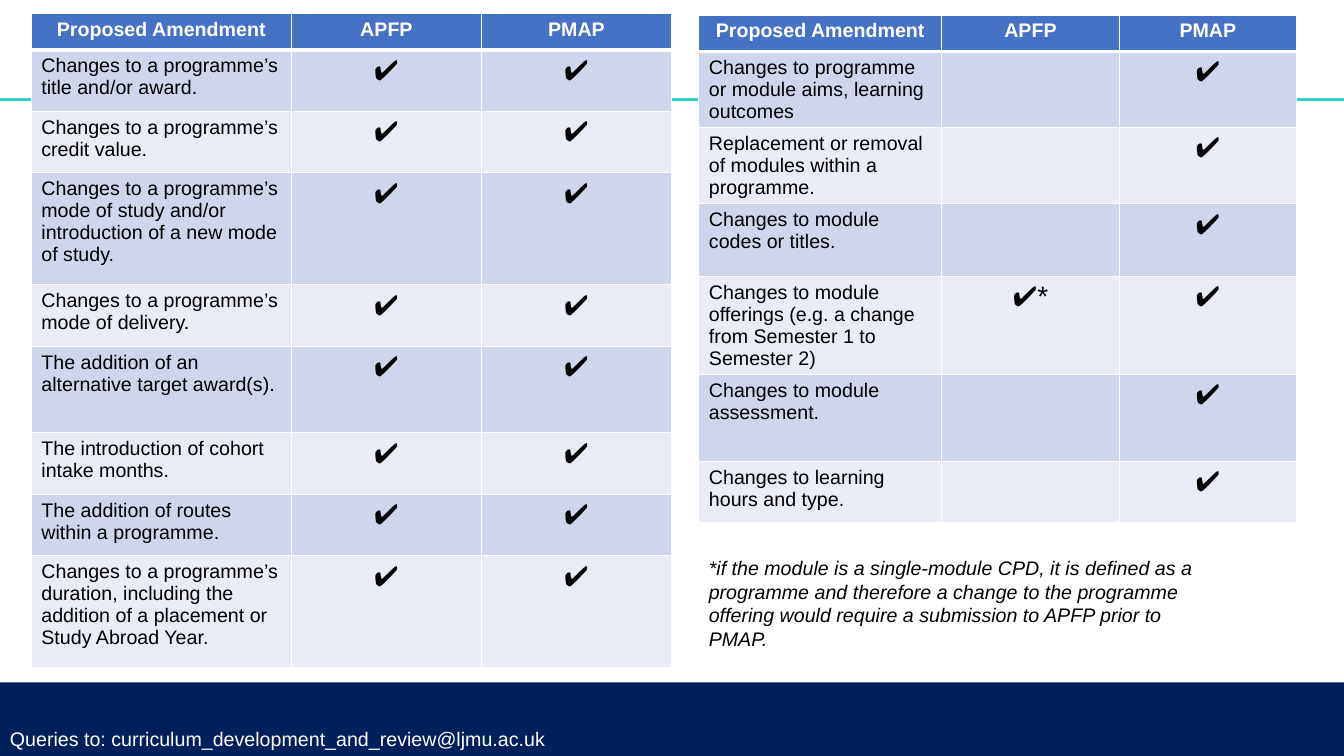
from lxml import etree
from pptx import Presentation
from pptx.dml.color import RGBColor
from pptx.enum.shapes import MSO_CONNECTOR, MSO_SHAPE
from pptx.enum.text import MSO_AUTO_SIZE, PP_ALIGN
from pptx.oxml.ns import qn
from pptx.util import Inches, Pt

LINE = MSO_CONNECTOR.STRAIGHT
RECT = MSO_SHAPE.RECTANGLE
GROW = MSO_AUTO_SIZE.SHAPE_TO_FIT_TEXT
FIXED = MSO_AUTO_SIZE.NONE
LEFT = PP_ALIGN.LEFT
MID = PP_ALIGN.CENTER

WHITE = RGBColor(0xFF, 0xFF, 0xFF)
BLACK = RGBColor(0, 0, 0)
NAVY = RGBColor(0x00, 0x20, 0x5B)
TEAL = RGBColor(0x2C, 0xD5, 0xC4)
BLUE = RGBColor(0x44, 0x72, 0xC4)
BANDS = RGBColor(0xE9, 0xEB, 0xF5), RGBColor(0xCF, 0xD5, 0xEA)

WIDE = Inches(13.33)
HIGH = Inches(7.5)
FONT = "Arial"
TICK = "✔"
HEAD = ("Proposed Amendment", "APFP", "PMAP")
COLS = (26, 19, 19)
FIRST = Inches(0.36)
STEP = Inches(0.25)

COURSE = [
    ("Changes to a programme’s title and/or award.", 2),
    ("Changes to a programme’s credit value.", 2),
    ("Changes to a programme’s mode of study and/or introduction of a new mode of study.", 4),
    ("Changes to a programme’s mode of delivery.", 2),
    ("The addition of an alternative target award(s).", 3),
    ("The introduction of cohort intake months.", 2),
    ("The addition of routes within a programme.", 2),
    ("Changes to a programme’s duration, including the addition of a placement "
     "or Study Abroad Year.", 4),
]
UNITS = [
    ("Changes to programme or module aims, learning outcomes", "", 2),
    ("Replacement or removal of modules within a programme.", "", 2),
    ("Changes to module codes or titles.", "", 2.44),
    ("Changes to module offerings (e.g. a change from Semester 1 to Semester 2)", TICK + "*", 2),
    ("Changes to module assessment.", "", 3),
    ("Changes to learning hours and type.", "", 2),
]
NOTE = ("*if the module is a single-module CPD, it is defined as a programme and therefore "
        "a change to the programme offering would require a submission to APFP prior to PMAP.")
MAIL = "Queries to: curriculum_development_and_review@ljmu.ac.uk"


def across(pct):
    return round(WIDE * pct / 100)


def down(pct):
    return round(HIGH * pct / 100)


def write(frame, text, color, size=14, bold=False, slant=False, align=LEFT):
    para = frame.paragraphs[0]
    para.alignment = align
    run = para.add_run()
    run.text = text
    font = run.font
    font.name = FONT
    font.size = Pt(size)
    font.bold = bold
    font.italic = slant
    font.color.rgb = color


def add_rule(slide, top):
    rule = slide.shapes.add_connector(LINE, 0, down(top), WIDE, down(top))
    rule.line.color.rgb = TEAL
    rule.line.width = Pt(2)
    etree.SubElement(rule.element.spPr, qn("a:effectLst"))


def add_bar(slide, top):
    bar = slide.shapes.add_shape(RECT, 0, down(top), WIDE, HIGH - down(top))
    bar.shadow.inherit = False
    bar.fill.solid()
    bar.fill.fore_color.rgb = NAVY
    bar.line.fill.background()


def add_text(slide, left, top, width, height, text, color, slant=False, fit=FIXED):
    box = slide.shapes.add_textbox(across(left), down(top), across(width), down(height))
    box.text_frame.word_wrap = True
    box.text_frame.auto_size = fit
    write(box.text_frame, text, color, slant=slant)


def edge(cell, side, width):
    props = cell._tc.get_or_add_tcPr()
    line = etree.SubElement(props, qn("a:ln" + side), w=str(Pt(width)))
    fill = etree.SubElement(line, qn("a:solidFill"))
    etree.SubElement(fill, qn("a:srgbClr"), val=str(WHITE))


def fill_cell(cell, row, col, text):
    head = row == 0
    for side in "LRTB":
        thick = (row, side) in ((0, "B"), (1, "T"))
        edge(cell, side, 3 if thick else 1)
    cell.fill.solid()
    cell.fill.fore_color.rgb = BLUE if head else BANDS[row % 2]
    if text:
        write(cell.text_frame, text, WHITE if head else BLACK,
              size=20 if col and not head else 14, bold=head,
              align=MID if head or col else LEFT)


def add_grid(slide, left, top, width, rows):
    rows = [(*HEAD, 1), *rows]
    tall = [round(FIRST + STEP * (row[-1] - 1)) for row in rows]
    frame = slide.shapes.add_table(len(rows), len(COLS), across(left), down(top),
                                   across(width), sum(tall))
    grid = frame.table
    for col, part in zip(grid.columns, COLS):
        col.width = round(across(width) * part / sum(COLS))
    for r, row in enumerate(rows):
        grid.rows[r].height = tall[r]
        for c, text in enumerate(row[:-1]):
            fill_cell(grid.cell(r, c), r, c, text)


def main():
    deck = Presentation()
    deck.slide_width = WIDE
    deck.slide_height = HIGH
    slide = deck.slides.add_slide(deck.slide_layouts[6])
    add_rule(slide, 13.15)
    add_bar(slide, 90.27)
    add_grid(slide, 2.33, 1.8, 47.64, [(text, TICK, TICK, size) for text, size in COURSE])
    add_grid(slide, 52, 2, 44.49, [(text, mark, TICK, size) for text, mark, size in UNITS])
    add_text(slide, 52, 72.93, 38.18, 13.87, NOTE, BLACK, slant=True, fit=GROW)
    add_text(slide, 0, 95.47, 58.89, 5.33, MAIL, WHITE)
    deck.save("out.pptx")


if __name__ == "__main__":
    main()
